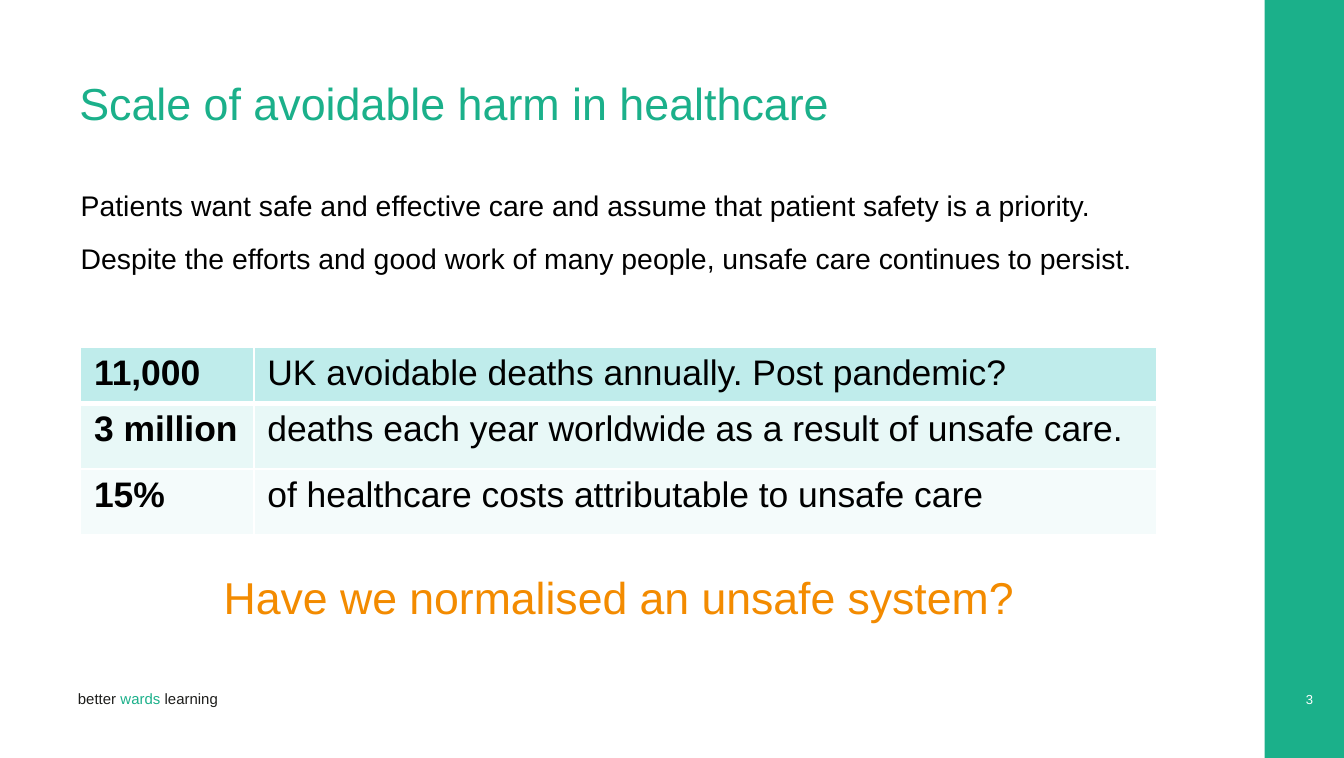
from pptx import Presentation
from pptx.dml.color import RGBColor
from pptx.enum.shapes import MSO_SHAPE
from pptx.enum.text import MSO_ANCHOR, PP_ALIGN
from pptx.oxml.ns import qn
from pptx.util import Inches, Pt
from lxml import etree

RECTANGLE = MSO_SHAPE.RECTANGLE
TOP, MIDDLE = MSO_ANCHOR.TOP, MSO_ANCHOR.MIDDLE
LEFT, CENTER, RIGHT = PP_ALIGN.LEFT, PP_ALIGN.CENTER, PP_ALIGN.RIGHT

# Content
FONT = "Arial"
COLORS = {"green": "1BB08A", "ink": "1D1D1B", "black": "000000",
          "white": "FFFFFF", "orange": "F38B00"}
TITLE = "Scale of avoidable harm in healthcare"
INTRO = [
    "Patients want safe and effective care and assume that patient safety is a priority.",
    "Despite the efforts and good work of many people, unsafe care continues to persist.",
]
HARM_ROWS = [  # figure, meaning, row height, fill
    ("11,000", "UK avoidable deaths annually. Post pandemic?", 0.42, "BFECEB"),
    ("3 million", "deaths each year worldwide as a result of unsafe care.", 0.49, "E8F8F7"),
    ("15%", "of healthcare costs attributable to unsafe care", 0.49, "F4FBFB"),
]
COLUMN_WIDTHS = [1.29, 6.72]
QUESTION = "Have we normalised an unsafe system?"
FOOTER = [("better ", "ink"), ("wards ", "green"), ("learning", "ink")]
PAGE_NUMBER = "3"

SLIDE_W, SLIDE_H = 10, 5.64
BAR_W = 0.59
MARGIN = 0.6


def style(font, size, color, bold=False):
    font.name, font.size, font.bold = FONT, Pt(size), bold
    font.color.rgb = RGBColor.from_string(COLORS[color])


def set_frame(frame, insets=(0, 0), anchor=TOP, wrap=True):
    frame.margin_left = frame.margin_right = Inches(insets[0])
    frame.margin_top = frame.margin_bottom = Inches(insets[1])
    frame.vertical_anchor = anchor
    frame.word_wrap = wrap


def add_text(slide, box, lines, size, color, align=LEFT, gap=0, **frame_options):
    frame = slide.shapes.add_textbox(*map(Inches, box)).text_frame
    set_frame(frame, **frame_options)
    for i, line in enumerate(lines):
        paragraph = frame.paragraphs[0] if i == 0 else frame.add_paragraph()
        paragraph.text = line
        paragraph.alignment = align
        if i:
            paragraph.space_before = Pt(gap)
        style(paragraph.font, size, color)
    return frame


def set_borders(cell, bottom):
    properties = cell._tc.get_or_add_tcPr()
    for side, width in (("L", 1), ("R", 1), ("T", 1), ("B", bottom)):
        line = etree.SubElement(properties, qn(f"a:ln{side}"), w=str(Pt(width)))
        fill = etree.SubElement(line, qn("a:solidFill"))
        etree.SubElement(fill, qn("a:srgbClr"), val=COLORS["white"])


def add_harm_table(slide):
    height = sum(row[2] for row in HARM_ROWS)
    table = slide.shapes.add_table(
        len(HARM_ROWS), len(COLUMN_WIDTHS), Inches(MARGIN), Inches(2.58),
        Inches(sum(COLUMN_WIDTHS)), Inches(height)).table
    for column, width in zip(table.columns, COLUMN_WIDTHS):
        column.width = Inches(width)
    for r, (figure, meaning, row_height, fill) in enumerate(HARM_ROWS):
        table.rows[r].height = Inches(row_height)
        for c, text in enumerate((figure, meaning)):
            cell = table.cell(r, c)
            cell.text = text
            style(cell.text_frame.paragraphs[0].font, 19, "black", bold=c == 0)
            set_borders(cell, bottom=3 if r == 0 else 1)
            cell.fill.solid()
            cell.fill.fore_color.rgb = RGBColor.from_string(fill)


def main():
    deck = Presentation()
    deck.slide_width, deck.slide_height = Inches(SLIDE_W), Inches(SLIDE_H)
    slide = deck.slides.add_slide(deck.slide_layouts[5])

    # Side bar
    bar = slide.shapes.add_shape(RECTANGLE, Inches(SLIDE_W - BAR_W), 0,
                                 Inches(BAR_W), Inches(SLIDE_H))
    bar.shadow.inherit = False
    bar.fill.solid()
    bar.fill.fore_color.rgb = RGBColor.from_string(COLORS["green"])
    bar.line.fill.background()

    # Title
    title = slide.shapes.title
    title.left, title.top, title.width, title.height = map(
        Inches, (0.59, 0.52, 8.23, 0.83))
    set_frame(title.text_frame)
    title.text_frame.text = TITLE
    heading = title.text_frame.paragraphs[0]
    heading.alignment = LEFT
    heading.line_spacing = 1.1
    style(heading.font, 24, "green")

    # Introduction, figures and closing question
    add_text(slide, (MARGIN, 1.35, 8.11, 1), INTRO, 15.2, "black",
             gap=10, insets=(0, 0.05))
    add_harm_table(slide)
    add_text(slide, (MARGIN, 4.19, sum(COLUMN_WIDTHS), 0.5), [QUESTION], 23.9,
             "orange", align=CENTER, insets=(0.1, 0.05))

    # Footer and page number
    footer = add_text(slide, (0.58, 5.13, 1.11, 0.13), [""], 8, "ink", wrap=False)
    for word, color in FOOTER:
        run = footer.paragraphs[0].add_run()
        run.text = word
        style(run.font, 8, color)
    add_text(slide, (9.53, 5.15, 0.24, 0.11), [PAGE_NUMBER], 7, "white",
             align=RIGHT, anchor=MIDDLE)

    deck.save("out.pptx")


if __name__ == "__main__":
    main()
